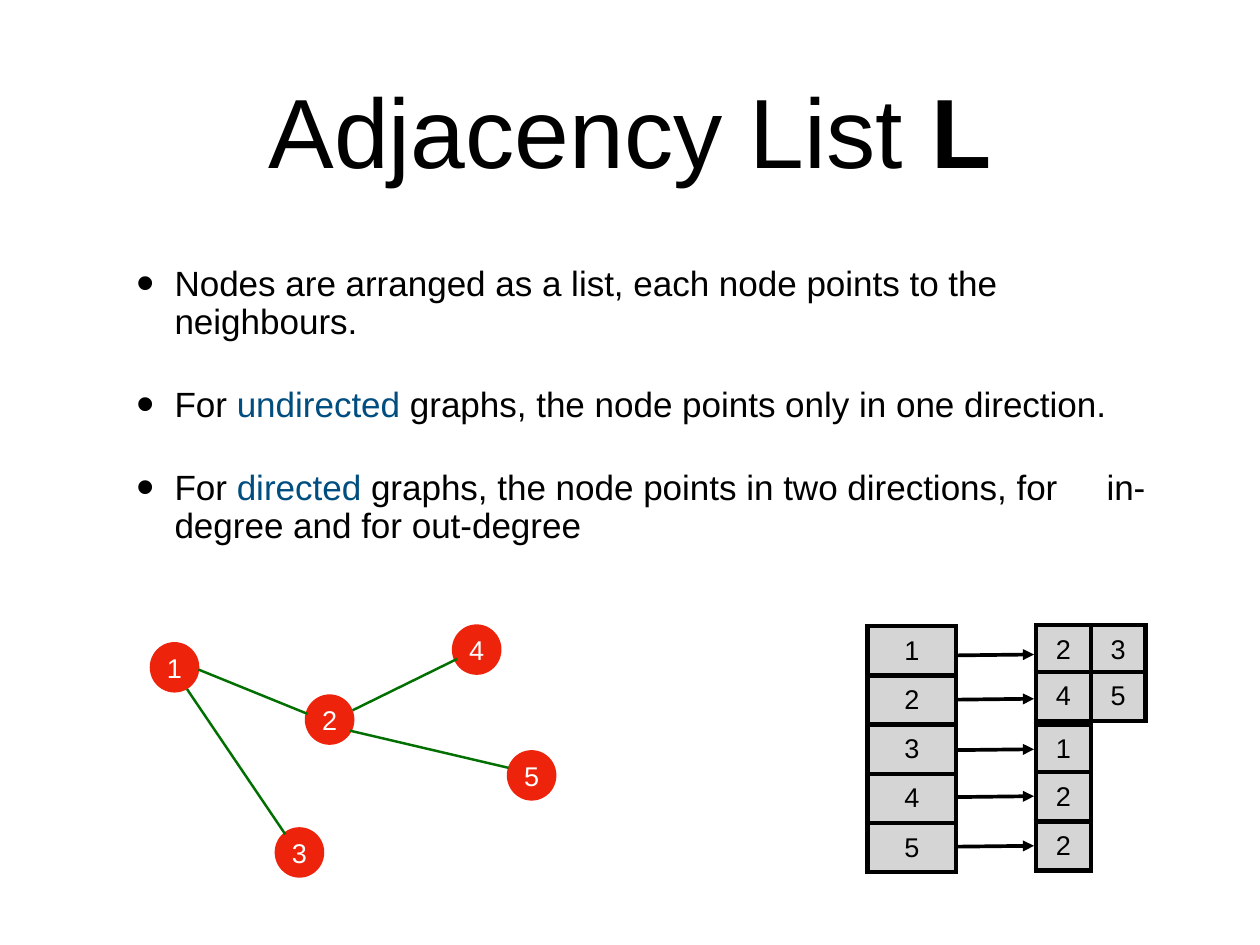
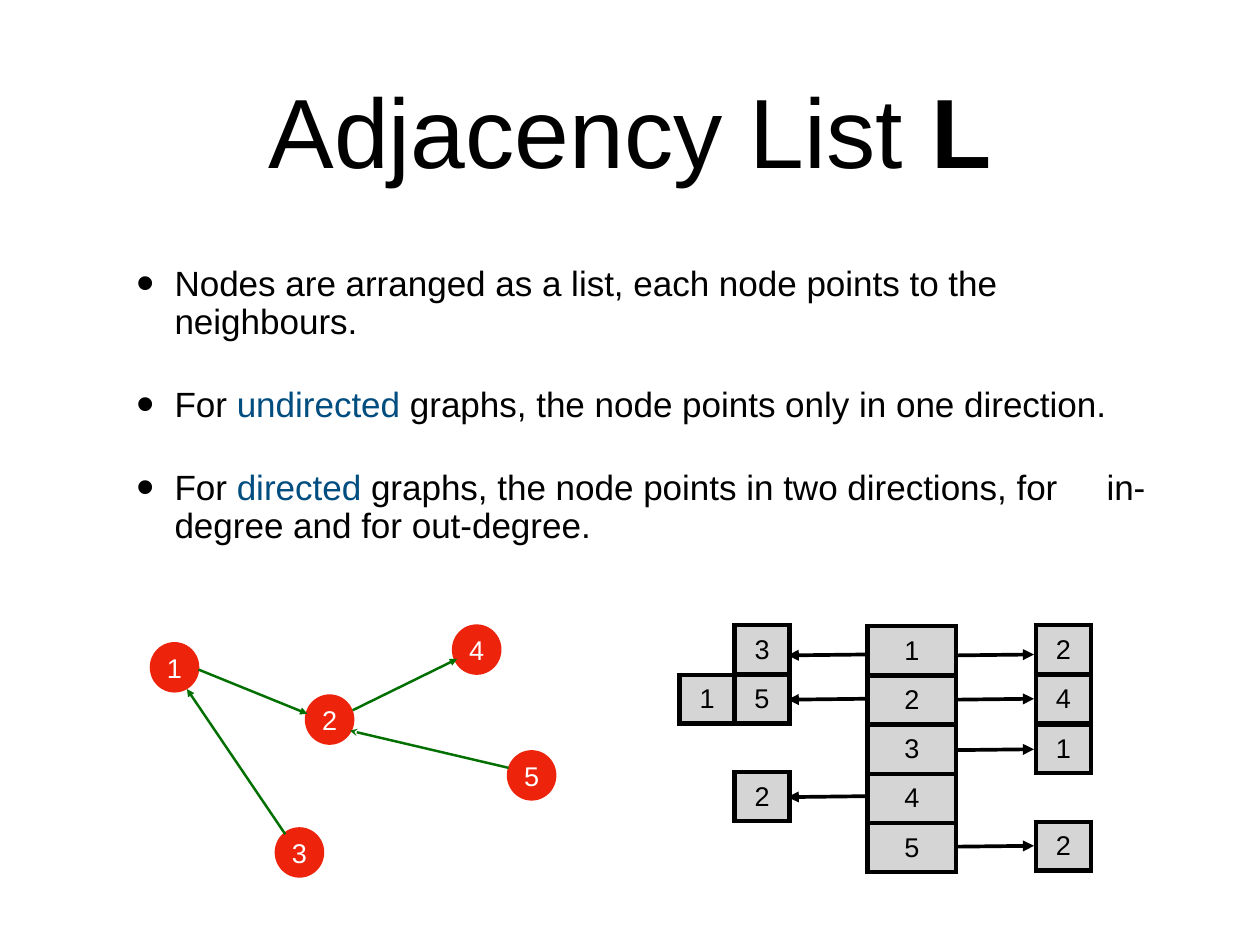
"""Builds two slides on adjacency lists for undirected and directed graphs."""
from lxml import etree
from pptx import Presentation
from pptx.dml.color import RGBColor
from pptx.enum.shapes import MSO_CONNECTOR, MSO_SHAPE
from pptx.enum.text import MSO_ANCHOR, MSO_AUTO_SIZE, PP_ALIGN
from pptx.oxml.ns import qn
from pptx.util import Inches, Pt

COLORS = {"text": "000000", "term": "004D80", "node": "EE230C",
          "label": "FFFFFF", "edge": "027001", "cell": "D6D5D5"}
FONT = "Arial"
INSET = 0.06
TERM = {"color": "term"}
WIDE_SPACE = {"spacing": 3168}

TITLE = [[("Adjacency List ", {}), ("L", {"bold": True})]]
POINTS = [
    [("Nodes are arranged as a list, each node points to the neighbours.", {})],
    [("For ", {}), ("undirected", TERM),
     (" graphs, the node points only in one direction.", {})],
    [("For ", {}), ("directed", TERM),
     (" graphs, the node points in two directions, for", {}),
     (" ", WIDE_SPACE)],
]
NODES = {1: (1.69, 7.25), 4: (5.1, 7.05), 3: (3.1, 9.34),
         5: (5.72, 8.47), 2: (3.44, 7.84)}
NODE_SIZE = (0.56, 0.57)
EDGES = [((2.24, 7.56), (3.47, 8.06), {"tail": "triangle"}),
         ((3.98, 8.02), (5.16, 7.44), {"tail": "triangle"}),
         ((3.95, 8.25), (5.74, 8.67), {"head": "stealth"}),
         ((3.22, 9.42), (2.11, 7.78), {"tail": "triangle"})]

SLIDES = [
    {"ending": "in-degree and for out-degree", "directed": False,
     "tops": [7.06, 7.59, 8.18, 8.72, 9.28],
     "outgoing": {1: [2, 3], 2: [4, 5], 3: [1], 4: [2], 5: [2]},
     "incoming": {}},
    {"ending": "in-degree and for out-degree.", "directed": True,
     "tops": [7.06, 7.62, 8.18, 8.72, 9.28],
     "outgoing": {1: [2], 2: [4], 3: [1], 5: [2]},
     "incoming": {1: [3], 2: [1, 5], 4: [2]}},
]
ARROW_Y = [7.4, 7.9, 8.47, 9, 9.56]
ARROW_LENGTH, ARROW_RISE = 0.88, 0.01
OUT_ARROW_LEFT, IN_ARROW_LEFT = 10.79, 8.89
OUT_LEFT, IN_RIGHT = 11.69, 8.91
LIST_CELL = (0.62, 0.55)
INDEX_AT, INDEX_CELL = (9.79, 7.07), (1, 0.556)


def rgb(key):
    return RGBColor.from_string(COLORS[key])


def write(frame, paragraphs, size=22, color="text", align=PP_ALIGN.CENTER,
          bullet=False, gap=0, line_spacing=None):
    frame.word_wrap = True
    for index, runs in enumerate(paragraphs):
        paragraph = frame.paragraphs[0] if index == 0 else frame.add_paragraph()
        if bullet:
            paragraph.level = 1
            props = paragraph._p.get_or_add_pPr()
            props.set("marL", str(Inches(0.87)))
            props.set("indent", str(Inches(-0.43)))
            etree.SubElement(props, qn("a:buSzPct"), val="145000")
            etree.SubElement(props, qn("a:buChar"), char="•")
        paragraph.alignment = align
        paragraph.space_before = Pt(gap if index else 0)
        if line_spacing:
            paragraph.line_spacing = line_spacing
        for text, style in runs:
            run = paragraph.add_run()
            run.text = text
            run.font.name, run.font.size = FONT, Pt(size)
            run.font.bold = style.get("bold", False)
            run.font.color.rgb = rgb(style.get("color", color))
            if "spacing" in style:
                run._r.get_or_add_rPr().set("spc", str(style["spacing"]))


def set_insets(frame):
    frame.margin_left = frame.margin_right = Inches(INSET)
    frame.margin_top = frame.margin_bottom = Inches(INSET)
    frame.vertical_anchor = MSO_ANCHOR.MIDDLE


def fill_placeholder(holder, top, height, paragraphs, **style):
    holder.left, holder.top = Inches(1.04), Inches(top)
    holder.width, holder.height = Inches(12.14), Inches(height)
    set_insets(holder.text_frame)
    holder.text_frame.auto_size = MSO_AUTO_SIZE.NONE
    write(holder.text_frame, paragraphs, **style)


def add_node(slide, number, at):
    node = slide.shapes.add_shape(MSO_SHAPE.OVAL, *map(Inches, at + NODE_SIZE))
    node.shadow.inherit = False
    node.fill.solid()
    node.fill.fore_color.rgb = rgb("node")
    node.line.fill.background()
    set_insets(node.text_frame)
    write(node.text_frame, [[(str(number), {})]], color="label")


def add_line(slide, start, end, color, width, head=None, tail=None):
    line = slide.shapes.add_connector(
        MSO_CONNECTOR.STRAIGHT, *map(Inches, start + end))
    line.line.color.rgb = rgb(color)
    line.line.width = Pt(width)
    outline = line.line._get_or_add_ln()
    for tag, kind in (("a:headEnd", head), ("a:tailEnd", tail)):
        if kind:
            etree.SubElement(outline, qn(tag), type=kind)
    etree.SubElement(line._element.spPr, qn("a:effectLst"))


def add_border(cell):
    props = cell._tc.get_or_add_tcPr()
    for position, side in enumerate(("lnL", "lnR", "lnT", "lnB")):
        border = etree.Element(qn("a:" + side), w=str(Pt(4)))
        fill = etree.SubElement(border, qn("a:solidFill"))
        etree.SubElement(fill, qn("a:srgbClr"), val=COLORS["text"])
        props.insert(position, border)


def add_grid(slide, left, top, rows, cell_size):
    width, height = cell_size
    columns = len(rows[0])
    table = slide.shapes.add_table(
        len(rows), columns, Inches(left), Inches(top),
        Inches(width * columns), Inches(height * len(rows))).table
    table.first_row = table.horz_banding = False
    for column in table.columns:
        column.width = Inches(width)
    for r, row in enumerate(rows):
        table.rows[r].height = Inches(height)
        for c, number in enumerate(row):
            cell = table.cell(r, c)
            cell.fill.solid()
            cell.fill.fore_color.rgb = rgb("cell")
            add_border(cell)
            set_insets(cell)
            write(cell.text_frame, [[(str(number), {})]])


def add_list_arrow(slide, left, row, **ends):
    y = ARROW_Y[row - 1]
    add_line(slide, (left, y), (left + ARROW_LENGTH, y - ARROW_RISE),
             "text", 3, **ends)


def add_adjacency_slide(deck, content):
    slide = deck.slides.add_slide(deck.slide_layouts[1])
    fill_placeholder(slide.shapes.title, 0.28, 2.36, TITLE, size=80)
    points = POINTS[:-1] + [POINTS[-1] + [(content["ending"], {})]]
    fill_placeholder(slide.placeholders[1], 2.83, 3.51, points, size=28.5,
                     align=PP_ALIGN.LEFT, bullet=True, gap=37, line_spacing=0.9)
    for number, at in NODES.items():
        add_node(slide, number, at)
    for start, end, ends in EDGES:
        add_line(slide, start, end, "edge", 2,
                 **(ends if content["directed"] else {}))
    add_grid(slide, *INDEX_AT, [[number] for number in sorted(NODES)], INDEX_CELL)
    tops = content["tops"]
    for row, numbers in content["outgoing"].items():
        add_grid(slide, OUT_LEFT, tops[row - 1], [numbers], LIST_CELL)
        add_list_arrow(slide, OUT_ARROW_LEFT, row, tail="triangle")
    for row, numbers in content["incoming"].items():
        left = IN_RIGHT - LIST_CELL[0] * len(numbers)
        add_grid(slide, left, tops[row - 1], [numbers], LIST_CELL)
        add_list_arrow(slide, IN_ARROW_LEFT, row, head="triangle")


def main():
    deck = Presentation()
    deck.slide_width, deck.slide_height = Inches(14.22), Inches(10.67)
    for content in SLIDES:
        add_adjacency_slide(deck, content)
    deck.save("out.pptx")


if __name__ == "__main__":
    main()
